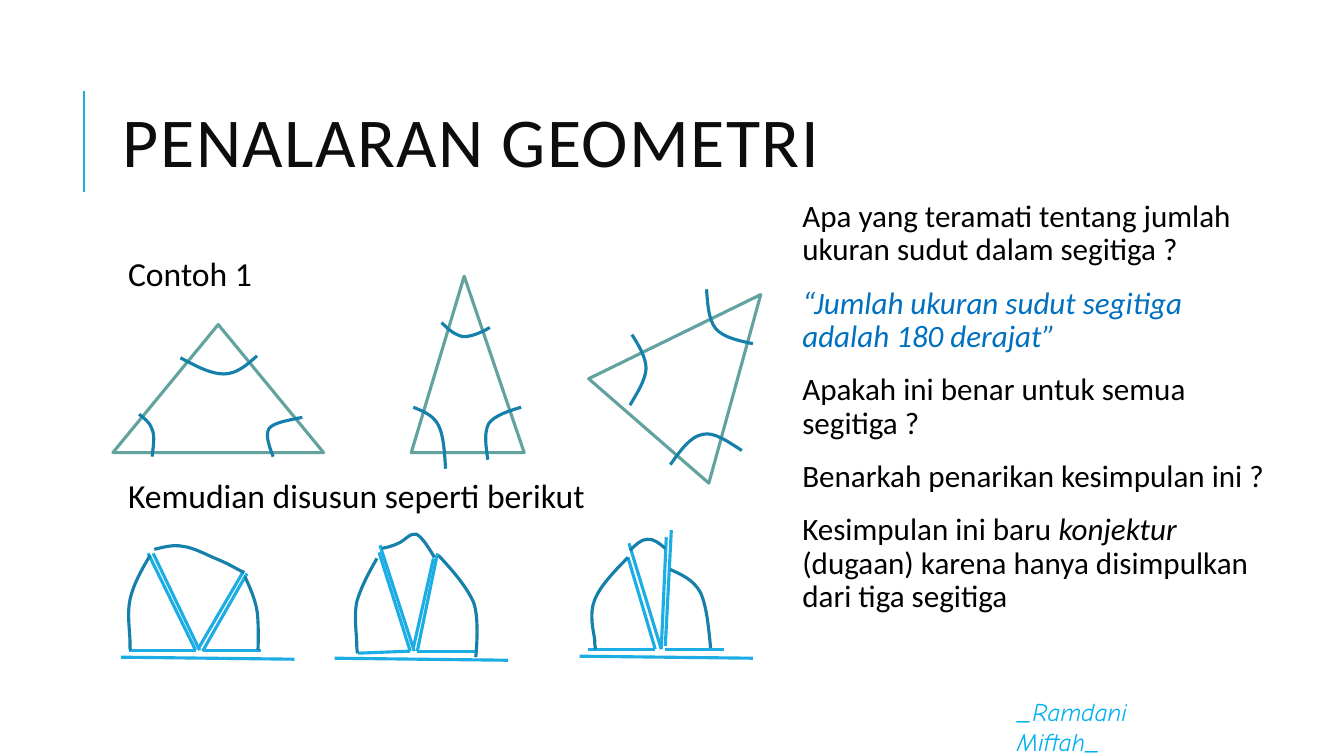
import lxml.etree
import pptx
import pptx.dml.color
import pptx.enum.shapes
import pptx.enum.text
import pptx.oxml.ns
import pptx.util

# The grid has square cells: 133.33 columns by 75 rows.
CELL = pptx.util.Inches(0.1)
COLUMNS, ROWS = 133.33, 75

COLORS = {
    "title": "0D0D0D",
    "text": "000000",
    "conjecture": "0070C0",
    "author": "00B0F0",
    "accent": "1CADE4",
    "arc": "1580A9",
    "triangle": "62A39F",
    "paper": "FFFFFF",
}

# left, top, width, height, rotation, position of the apex
TRIANGLES = [
    (11.2, 32.2, 20.9, 12.7, 0, 0.5),
    (40.8, 27.4, 11.2, 17.5, 0, 0.469),
    (62.2, 27.4, 15.8, 17.5, 41, 0.469),
]

# Each arc is a start point followed by three points per Bézier segment.
ANGLE_ARCS = [
    [(13.8, 41.1), (14.3, 41.5), (14.9, 41.9), (15.1, 42.6), (15.4, 43.3), (15.2, 44.3), (15.1, 45.3)],
    [(17.9, 35.5), (19.4, 36.3), (20.9, 37.1), (22.2, 37.1), (23.5, 37.1), (24.5, 36.2), (25.5, 35.3)],
    [(27.1, 45.3), (26.7, 44.2), (26.3, 43.2), (26.7, 42.5), (27.2, 41.9), (28.6, 41.7), (30, 41.4)],
    [(43.8, 32), (44.5, 32.7), (45.2, 33.3), (46, 33.4), (46.8, 33.4), (47.7, 33), (48.6, 32.5)],
    [(41, 40.4), (42, 40.8), (43, 41.2), (43.5, 42.2), (44, 43.2), (44.1, 44.8), (44.2, 46.5)],
    [(48.4, 45.6), (48.2, 44.2), (48, 42.9), (48.5, 42), (49.1, 41.2), (50.4, 40.8), (51.7, 40.4)],
    [(70.1, 28.7), (70.2, 30.2), (70.3, 31.7), (71, 32.6), (71.8, 33.5), (73.3, 33.8), (74.7, 34.1)],
    [(62.7, 33.2), (63.4, 34.3), (64.1, 35.5), (64.1, 36.6), (64, 37.8), (63.2, 39), (62.5, 40.2)],
    [(66.5, 46.1), (67.5, 44.7), (68.5, 43.3), (69.7, 43.1), (70.8, 42.8), (72.2, 43.8), (73.6, 44.7)],
]

# The cut-off corners of each triangle, laid side by side on a base line.
CORNER_SETS = [
    {
        "base": (12, 65.2),
        "edges": [
            (14.7, 54.9, 19.4, 64.5), (12.8, 64.5, 19.4, 64.5), (15.2, 54.9, 19.8, 64.5),
            (19.7, 64.3, 24.2, 56.6), (20.1, 64.6, 24.5, 56.9), (20.1, 64.5, 25.9, 64.5),
        ],
        "arcs": [
            [(15.3, 54.5), (16.2, 54.3), (17.1, 54), (18.1, 54.2), (19.2, 54.3), (20.6, 55.1),
             (21.6, 55.5), (22.6, 55.9), (23.4, 56.4), (24.2, 56.8)],
            [(24.3, 57.2), (24.8, 58.3), (25.3, 59.4), (25.5, 60.6), (25.7, 61.9), (25.6, 64.5), (25.6, 64.5)],
            [(13, 64.5), (12.9, 64.5), (12.9, 64.5), (12.9, 63.6), (12.9, 62.8), (12.6, 60.9),
             (12.9, 59.5), (13.2, 58.1), (14, 56.6), (14.9, 55.1)],
        ],
    },
    {
        "base": (33.2, 65.3),
        "edges": [
            (37.6, 54.8, 40.7, 64.6), (35.5, 64.8, 40.7, 64.6), (37.7, 54.1, 41.1, 64.6),
            (41, 64.3, 43, 55.4), (41.4, 64.6, 43.4, 54.9), (41.4, 64.6, 47.2, 64.6),
        ],
        "arcs": [
            [(43.5, 55.1), (44.9, 56.6), (46.3, 58.2), (47, 59.8), (47.6, 61.5), (47.2, 65.2), (47.2, 65.2)],
            [(35.5, 64.8), (35.5, 64.8), (35.4, 64.7), (35.4, 63.9), (35.4, 63), (35.1, 61.2),
             (35.4, 59.7), (35.8, 58.3), (36.6, 56.8), (37.4, 55.4)],
            [(37.9, 54.4), (38.4, 54.3), (38.9, 54.2), (39.5, 53.9), (40.1, 53.7), (40.7, 52.8),
             (41.3, 53), (41.9, 53.3), (42.5, 54.3), (43.1, 55.3)],
        ],
    },
    {
        "base": (57.5, 65.1),
        "edges": [
            (62.3, 55.3, 65, 64.4), (58.3, 64.4, 65, 64.4), (62.4, 53.9, 65.6, 64.4),
            (66, 64.1, 66.6, 52.6), (65.6, 64.4, 66.1, 53.3), (66, 64.4, 71.8, 64.4),
        ],
        "arcs": [
            [(59.1, 64.4), (59.1, 64.3), (59, 64.3), (59, 63.5), (58.9, 62.7), (58.4, 60.9),
             (59, 59.5), (59.5, 58.2), (60.9, 56.7), (62.3, 55.3)],
            [(62.5, 54.6), (63, 54.1), (63.6, 53.5), (64.2, 53.5), (64.8, 53.4), (65.4, 53.9), (66, 54.4)],
            [(66.5, 56.5), (67.6, 57), (68.8, 57.5), (69.5, 58.8), (70.1, 60.1), (70.3, 62.2), (70.5, 64.3)],
        ],
    },
]


def cells(*counts):
    return [round(count * CELL) for count in counts]


def color(name):
    return pptx.dml.color.RGBColor.from_string(COLORS[name])


def style_line(line, name, width=2.25):
    line.color.rgb = color(name)
    line.width = pptx.util.Pt(width)


def style_font(font, size, name, typeface="Calibri", italic=False):
    font.size = pptx.util.Pt(size)
    font.name = typeface
    font.color.rgb = color(name)
    font.italic = italic


def place(shape, *box):
    shape.left, shape.top, shape.width, shape.height = cells(*box)


def set_frame(shape, anchor, inset=None):
    frame = shape.text_frame
    frame.word_wrap = True
    frame.auto_size = pptx.enum.text.MSO_AUTO_SIZE.NONE
    frame.vertical_anchor = anchor
    if inset is not None:
        frame.margin_left = frame.margin_right = frame.margin_top = frame.margin_bottom = round(inset * CELL)
    return frame


def fill_list(frame, items, size):
    """Write one paragraph per item: its runs as (text, italic), colour and space before."""
    for index, (runs, name, space) in enumerate(items):
        paragraph = frame.add_paragraph() if index else frame.paragraphs[0]
        paragraph.alignment = pptx.enum.text.PP_ALIGN.LEFT
        paragraph.line_spacing = 0.9
        paragraph.space_before = pptx.util.Pt(space)
        paragraph.space_after = pptx.util.Pt(2)
        style_font(paragraph.font, size, name, italic=runs[0][1])
        for text, italic in runs:
            run = paragraph.add_run()
            run.text = text
            if len(runs) > 1:
                run.font.italic = italic
        properties = paragraph._p.get_or_add_pPr()
        properties.set("marL", str(CELL))
        properties.set("indent", "0")
        properties.insert_element_before(
            properties.makeelement(pptx.oxml.ns.qn("a:buNone")), "a:tabLst", "a:defRPr", "a:extLst")


def draw_line(shapes, *ends, width=2.25):
    line = shapes.add_connector(pptx.enum.shapes.MSO_CONNECTOR.STRAIGHT, *cells(*ends))
    style_line(line.line, "accent", width)
    lxml.etree.SubElement(line._element.spPr, pptx.oxml.ns.qn("a:effectLst"))


def draw_arc(shapes, points):
    """Draw an open outline, then turn each three line segments into one Bézier segment."""
    start, *others = [cells(*point) for point in points]
    builder = shapes.build_freeform(*start)
    builder.add_line_segments(others, close=False)
    arc = builder.convert_to_shape()
    arc.shadow.inherit = False
    arc.fill.background()
    style_line(arc.line, "arc")
    outline = next(arc._element.iter(pptx.oxml.ns.qn("a:path")))
    segments = outline.findall(pptx.oxml.ns.qn("a:lnTo"))
    for first in range(0, len(segments), 3):
        curve = lxml.etree.SubElement(outline, pptx.oxml.ns.qn("a:cubicBezTo"))
        for segment in segments[first:first + 3]:
            curve.append(segment[0])
            outline.remove(segment)


def draw_triangle(shapes, left, top, width, height, rotation, apex):
    triangle = shapes.add_shape(
        pptx.enum.shapes.MSO_SHAPE.ISOSCELES_TRIANGLE, *cells(left, top, width, height))
    triangle.adjustments[0] = apex
    triangle.rotation = rotation
    triangle.shadow.inherit = False
    triangle.fill.solid()
    triangle.fill.fore_color.rgb = color("paper")
    style_line(triangle.line, "triangle")


def draw_corner_set(shapes, base, edges, arcs):
    left, top = base
    draw_line(shapes, left, top, left + 17.2, top + 0.2)
    for edge in edges:
        draw_line(shapes, *edge)
    for arc in arcs:
        draw_arc(shapes, arc)


def write_title(title):
    place(title, 11.2, 6.4, 106.3, 16.4)
    paragraph = set_frame(title, pptx.enum.text.MSO_ANCHOR.MIDDLE).paragraphs[0]
    paragraph.text = "PENALARAN GEOMETRI"
    paragraph.alignment = pptx.enum.text.PP_ALIGN.LEFT
    paragraph.line_spacing = 0.8
    style_font(paragraph.font, 50, "title")
    paragraph.runs[0]._r.get_or_add_rPr().set("spc", "100")


def write_author(slide):
    author = slide.shapes.add_textbox(*cells(99.9, 70.3, 19, 3.5))
    paragraph = set_frame(author, pptx.enum.text.MSO_ANCHOR.MIDDLE).paragraphs[0]
    paragraph.text = "_Ramdani Miftah_"
    style_font(paragraph.font, 18, "author", "Comic Neue", italic=True)


def main():
    presentation = pptx.Presentation()
    presentation.slide_width, presentation.slide_height = cells(COLUMNS, ROWS)
    slide = presentation.slides.add_slide(presentation.slide_layouts[1])
    top = pptx.enum.text.MSO_ANCHOR.TOP

    draw_line(slide.shapes, 8.3, 19, 8.3, 9, width=1.5)
    write_author(slide)
    write_title(slide.shapes.title)

    body = slide.placeholders[1]
    place(body, 11.2, 25, 106.3, 44)
    fill_list(set_frame(body, top, 0.5), [
        ([("Contoh 1", False)], "text", 12),
        ([("Kemudian disusun seperti berikut", False)], "text", 131),
    ], 24)

    triangles = slide.shapes.add_group_shape().shapes
    for triangle in TRIANGLES:
        draw_triangle(triangles, *triangle)
    for arc in ANGLE_ARCS:
        draw_arc(triangles, arc)

    corners = slide.shapes.add_group_shape().shapes
    for corner_set in CORNER_SETS:
        draw_corner_set(corners, **corner_set)

    questions = slide.shapes.add_textbox(*cells(78.1, 19.4, 49, 44))
    fill_list(set_frame(questions, top, 0.5), [
        ([("Apa yang teramati tentang jumlah ukuran sudut dalam segitiga ?", False)], "text", 12),
        ([("“Jumlah ukuran sudut segitiga adalah 180 derajat”", True)], "conjecture", 12),
        ([("Apakah ini benar untuk semua segitiga ?", False)], "text", 12),
        ([("Benarkah penarikan kesimpulan ini ?", False)], "text", 12),
        ([("Kesimpulan ini baru ", False), ("konjektur", True),
          (" (dugaan) karena hanya disimpulkan dari tiga segitiga", False)], "text", 12),
    ], 22.2)

    presentation.save("out.pptx")


if __name__ == "__main__":
    main()
